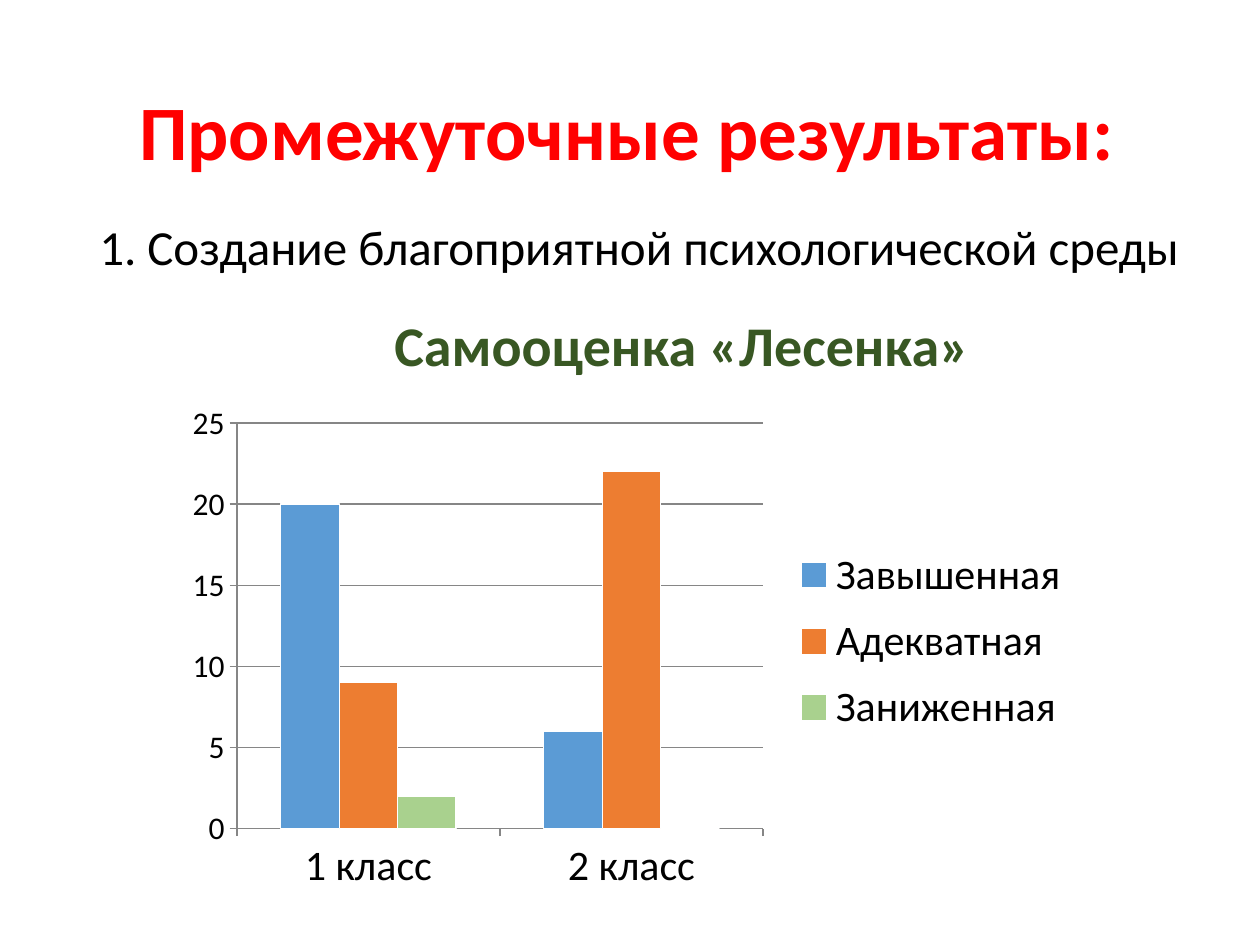
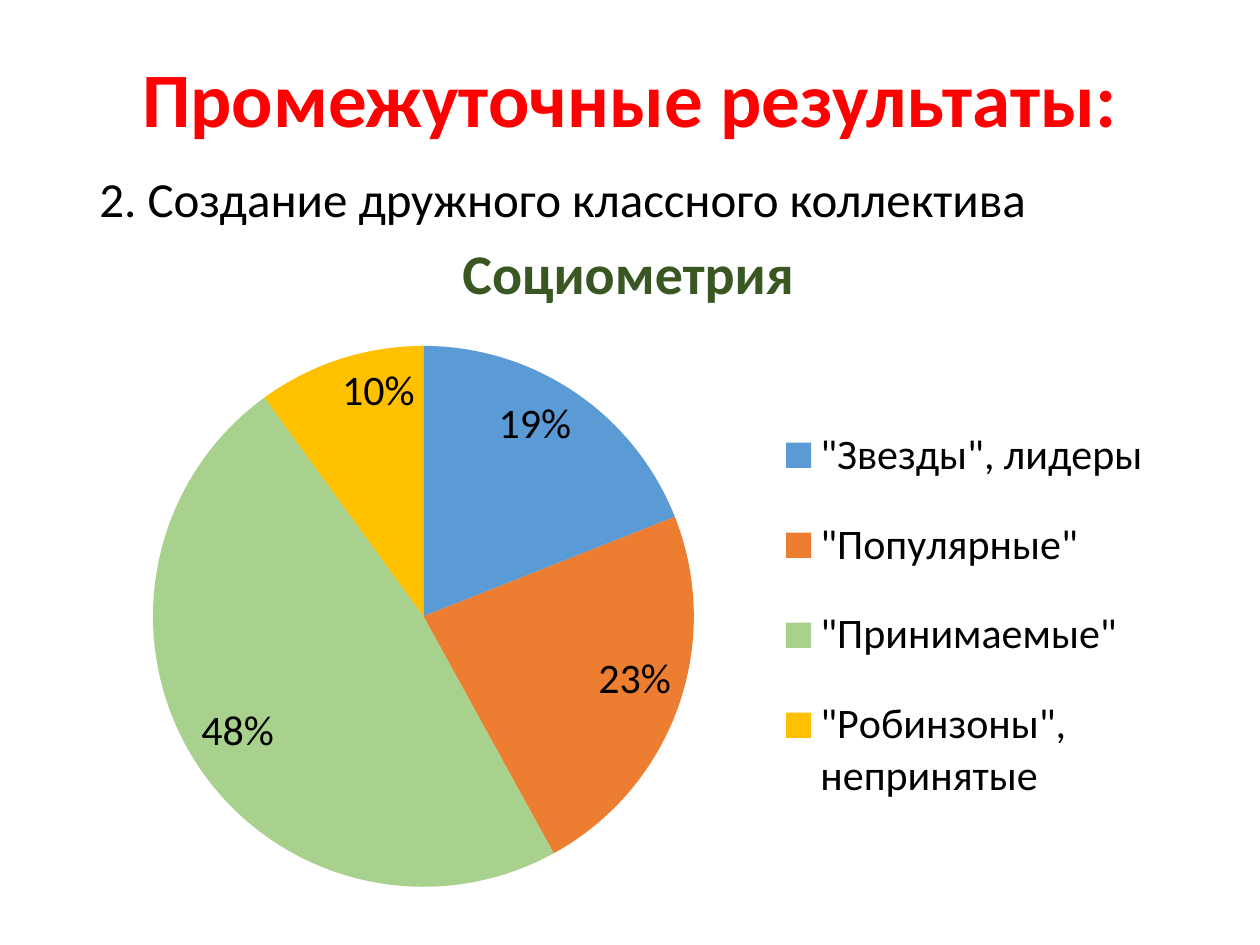
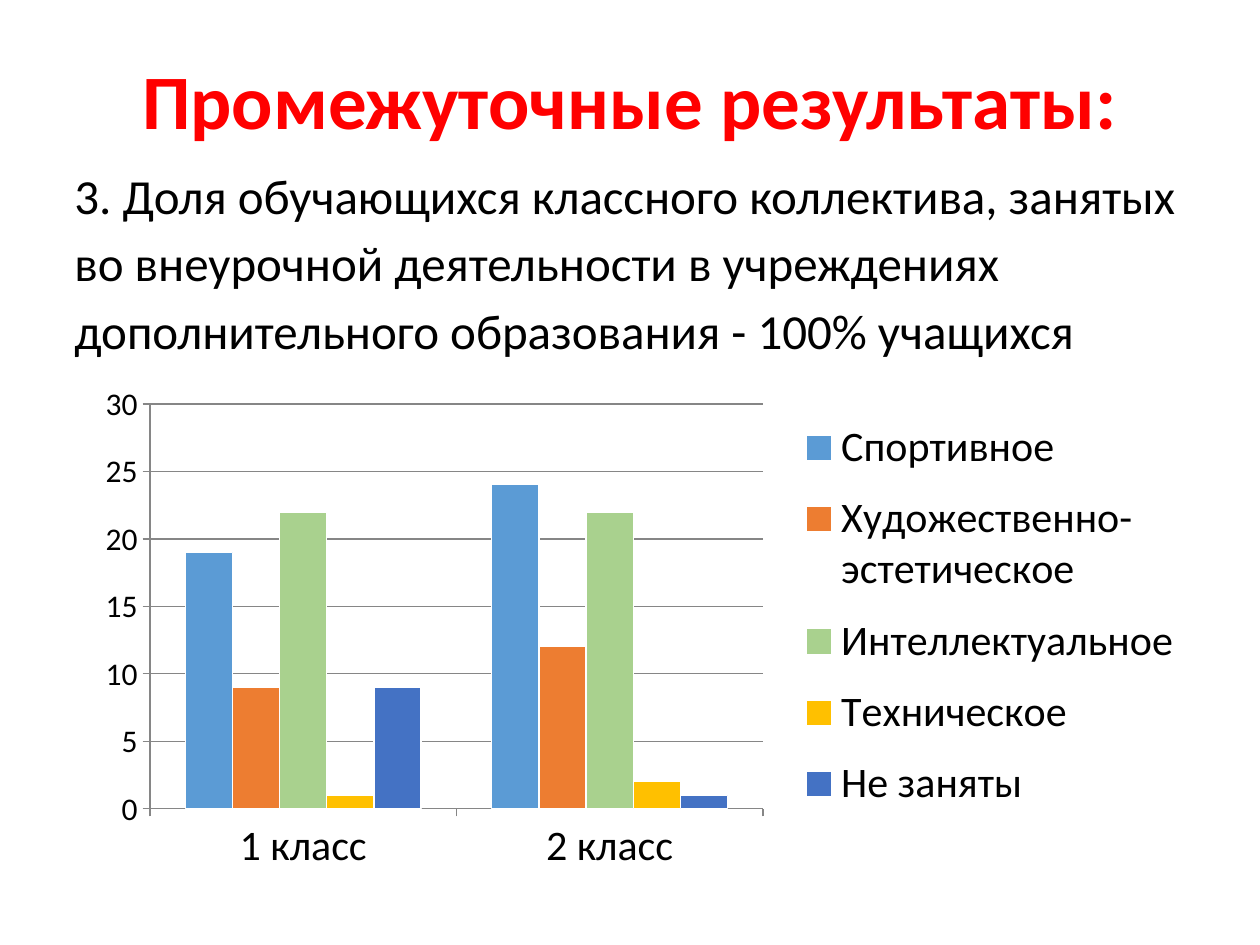
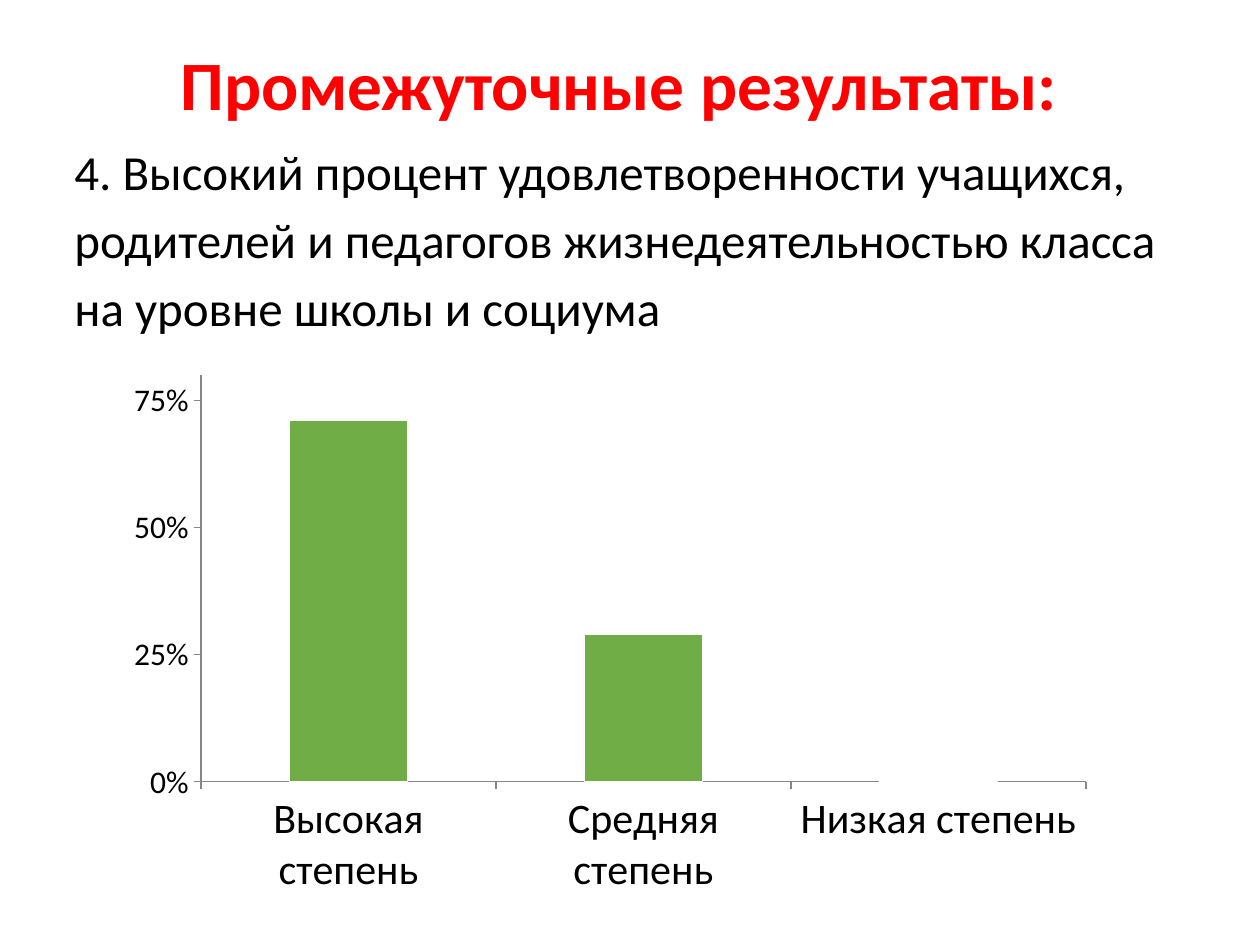
from lxml import etree
from pptx import Presentation
from pptx.chart.data import CategoryChartData
from pptx.dml.color import RGBColor
from pptx.enum.chart import (XL_CHART_TYPE as CT, XL_LABEL_POSITION as LABEL_POS,
                             XL_LEGEND_POSITION as LEGEND_POS, XL_TICK_MARK as TICK)
from pptx.enum.text import MSO_ANCHOR as ANCHOR, MSO_AUTO_SIZE as AUTO, PP_ALIGN as ALIGN
from pptx.oxml.ns import qn
from pptx.util import Emu, Pt

FONT = "Calibri"
BLACK, WHITE, RED, DARK_GREEN, GREY = "000000", "FFFFFF", "FF0000", "385723", "868686"
BLUE, ORANGE, LIGHT_GREEN, GOLD, INDIGO = "5B9BD5", "ED7D31", "A9D18E", "FFC000", "4472C4"
GREEN = "70AD47"
PALETTE = [BLUE, ORANGE, LIGHT_GREEN, GOLD, INDIGO]
CLASSES = ["1 класс", "2 класс"]
W, H = 1260, 945


def px(n):
    return Emu(round(n * 914400 / 126))


def rgb(color):
    return RGBColor.from_string(color)


def set_font(font, size, color=BLACK, bold=False):
    font.name, font.size, font.bold = FONT, Pt(size), bold
    font.color.rgb = rgb(color)


def add_text(slide, box, text, size=28, color=BLACK, bold=False, align=ALIGN.LEFT,
             anchor=ANCHOR.TOP, spacing=1.0, after=0, wrap=True, number=False):
    sp = slide.shapes.add_textbox(*map(px, box))
    tf = sp.text_frame
    tf.word_wrap, tf.vertical_anchor = wrap, anchor
    tf.auto_size = AUTO.NONE if wrap else AUTO.SHAPE_TO_FIT_TEXT
    p = tf.paragraphs[0]
    p.alignment, p.line_spacing, p.space_after = align, spacing, Pt(after)
    if number:
        pPr = p._p.get_or_add_pPr()
        pPr.set("marL", str(px(48)))
        pPr.set("indent", str(-px(48)))
        etree.SubElement(pPr, qn("a:buFont"), typeface="+mj-lt")
        etree.SubElement(pPr, qn("a:buAutoNum"), type="arabicPeriod")
    r = p.add_run()
    r.text = text
    set_font(r.font, size, color, bold)
    return sp


# Text regions
def add_title(slide, box, size=44):
    return add_text(slide, box, "Промежуточные результаты:", size=size, color=RED, bold=True,
                    align=ALIGN.CENTER, anchor=ANCHOR.MIDDLE, spacing=0.9)


def add_point(slide, box, text, number=False):
    add_text(slide, box, text, spacing=1.15, after=7.5, number=number)


def add_chart_heading(slide, box, text):
    add_text(slide, box, text, size=32, color=DARK_GREEN, bold=True, wrap=False)


# Charts
def set_layout(parent, before, box, area, inner=False):
    """Place a chart part: area is in px from the corner of the chart box."""
    for old in parent.findall(qn("c:layout")):
        parent.remove(old)
    layout = etree.Element(qn("c:layout"))
    manual = etree.SubElement(layout, qn("c:manualLayout"))
    settings = [("layoutTarget", "inner")] if inner else []
    settings += [("xMode", "edge"), ("yMode", "edge")]
    sizes = (box[2], box[3]) * 2
    settings += [(k, f"{n / s:.4f}") for k, n, s in zip("xywh", area, sizes)]
    for key, value in settings:
        etree.SubElement(manual, qn("c:" + key), val=value)
    if before is None:
        parent.insert(0, layout)
    else:
        before.addnext(layout)


def add_chart(slide, kind, box, plot, cats, series, legend=None):
    data = CategoryChartData()
    data.categories = cats
    for name, values in series:
        data.add_series(name, values)
    chart = slide.shapes.add_chart(kind, *map(px, box), data).chart
    set_font(chart.font, 18)
    chart.has_title = False
    chart.has_legend = legend is not None
    if legend:
        chart.legend.position = LEGEND_POS.RIGHT
        chart.legend.include_in_layout = False
        set_font(chart.legend.font, 24)
        el = chart.legend._element
        set_layout(el, el.find(qn("c:legendPos")), box, legend)
    set_layout(chart._chartSpace.chart.plotArea, None, box, plot, inner=True)
    return chart


def paint(fmt, color):
    fmt.fill.solid()
    fmt.fill.fore_color.rgb = rgb(color)


def add_columns(slide, box, plot, cats, series, legend=None, colors=PALETTE, grid=True):
    chart = add_chart(slide, CT.COLUMN_CLUSTERED, box, plot, cats, series, legend)
    bars = chart.plots[0]
    bars.gap_width, bars.vary_by_categories = 150, False
    for s, color in zip(bars.series, colors):
        s.invert_if_negative = False
        paint(s.format, color)
        s.format.line.color.rgb = rgb(WHITE)
        s.format.line.width = Pt(0.75)
    lines = []
    for axis, size in ((chart.category_axis, 24), (chart.value_axis, 18)):
        axis.major_tick_mark, axis.minor_tick_mark = TICK.OUTSIDE, TICK.NONE
        set_font(axis.tick_labels.font, size)
        lines.append(axis.format.line)
    chart.value_axis.has_major_gridlines = grid
    if grid:
        lines.append(chart.value_axis.major_gridlines.format.line)
    for line in lines:
        line.color.rgb = rgb(GREY)
        line.width = Pt(0.75)
    return chart


def add_pie(slide, box, plot, cats, series, legend):
    chart = add_chart(slide, CT.PIE, box, plot, cats, series, legend)
    pie = chart.plots[0]
    pie.vary_by_categories = True
    for i, color in enumerate(PALETTE[:len(cats)]):
        paint(pie.series[0].points[i].format, color)
    pie.has_data_labels = True
    labels = pie.data_labels
    labels.show_percentage, labels.show_value = True, False
    labels.number_format, labels.number_format_is_linked = "0%", False
    labels.position = LABEL_POS.INSIDE_END
    set_font(labels.font, 24)


# Slides
def self_esteem(slide):
    add_title(slide, (84, 68, 1086, 135))
    add_point(slide, (87, 202, 1118, 650), "Создание благоприятной психологической среды",
              number=True)
    add_columns(slide, (175, 393, 903, 509), (62, 30, 526, 406), CLASSES,
                [("Завышенная", (20, 6)), ("Адекватная", (9, 22)), ("Заниженная", (2, 0))],
                legend=(616, 142, 280, 213))
    add_chart_heading(slide, (382, 304, 606, 81), "Самооценка «Лесенка»")


def sociometry(slide):
    add_title(slide, (87, 47, 1086, 111))
    add_point(slide, (87, 154, 1086, 103), "2. Создание дружного классного коллектива")
    add_chart_heading(slide, (450, 232, 360, 81), "Социометрия")
    add_pie(slide, (82, 329, 1079, 576), (71, 17, 541, 541),
            ['"Звезды", лидеры', '"Популярные"', '"Принимаемые"', '"Робинзоны", непринятые'],
            [("Series 1", (19, 23, 48, 10))], legend=(690, 62, 385, 450))


def activities(slide):
    add_title(slide, (87, 55, 1086, 100))
    add_point(slide, (62, 150, 1142, 219),
              "3. Доля обучающихся классного коллектива, занятых во внеурочной деятельности "
              "в учреждениях дополнительного образования - 100% учащихся")
    add_columns(slide, (84, 374, 1106, 509), (66, 30, 613, 405), CLASSES,
                [("Спортивное", (19, 24)), ("Художественно-эстетическое", (9, 12)),
                 ("Интеллектуальное", (22, 22)), ("Техническое", (1, 2)),
                 ("Не заняты", (9, 1))],
                legend=(711, 28, 390, 428))


def satisfaction(slide):
    title = add_title(slide, (76, 58, 1086, 135), size=39.6)
    title.text_frame.margin_top, title.text_frame.margin_bottom = 0, px(75)
    add_point(slide, (62, 127, 1130, 247),
              "4. Высокий процент удовлетворенности учащихся, родителей и педагогов "
              "жизнедеятельностью класса на уровне школы и социума")
    chart = add_columns(slide, (113, 364, 993, 544), (88, 11, 885, 407),
                        ["Высокая степень", "Средняя степень", "Низкая степень"],
                        [("Series 1", (0.71, 0.29, 0))], colors=[GREEN], grid=False)
    axis = chart.value_axis
    axis.minimum_scale, axis.maximum_scale, axis.major_unit = 0, 0.8, 0.25
    axis.tick_labels.number_format = "0%"
    axis.tick_labels.number_format_is_linked = False


def main():
    prs = Presentation()
    prs.slide_width, prs.slide_height = px(W), px(H)
    for build in (self_esteem, sociometry, activities, satisfaction):
        build(prs.slides.add_slide(prs.slide_layouts[6]))
    prs.save("out.pptx")


if __name__ == "__main__":
    main()
